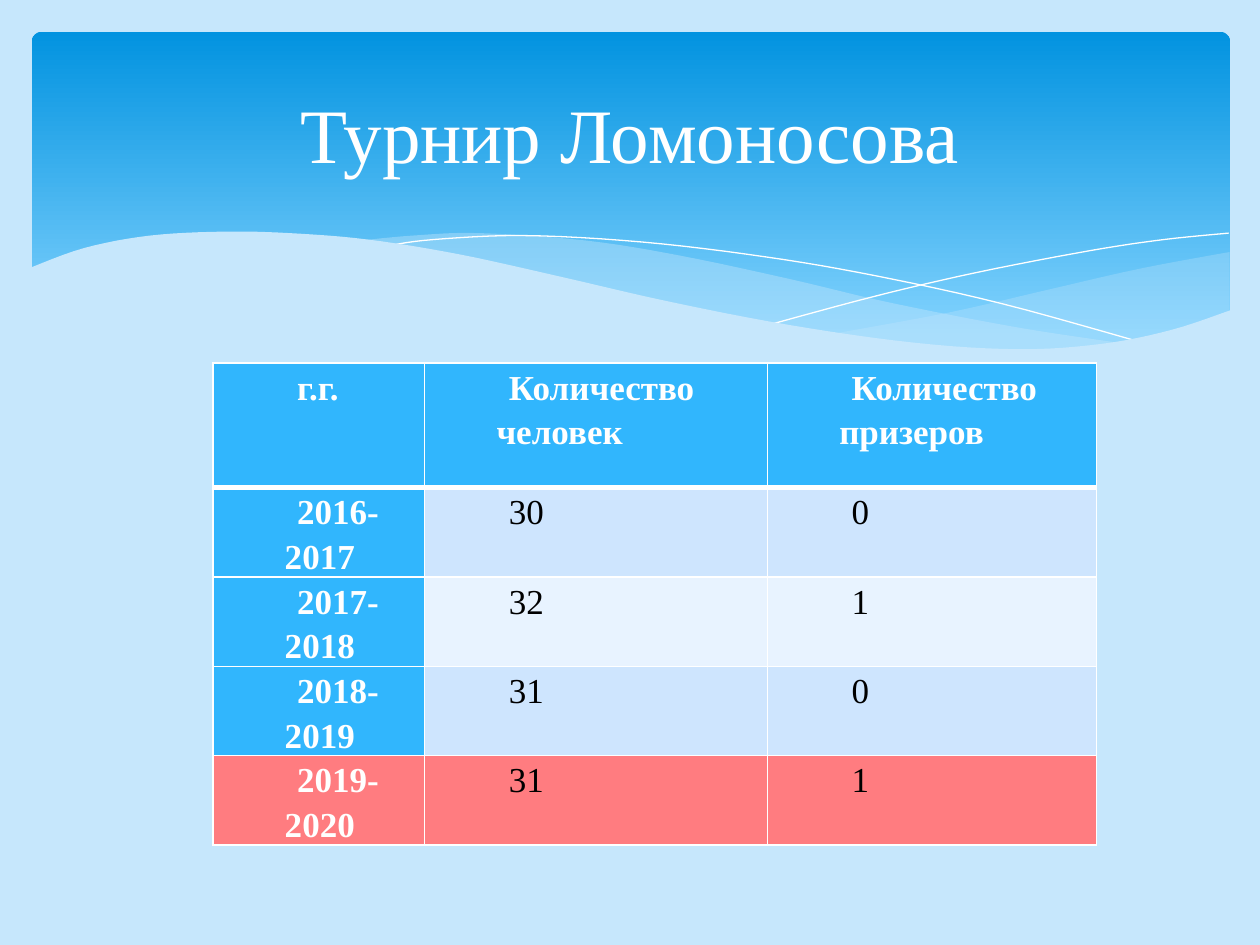
from itertools import pairwise
from lxml import etree
from pptx import Presentation, util as u
from pptx.dml.color import RGBColor
from pptx.enum import shapes, text
from pptx.oxml.ns import qn

hexcolor = RGBColor.from_string
WHITE, SKY, BLUE, RED = "FFFFFF", "C6E7FC", "31B6FD", "FF7C80"
FONT = "Times New Roman"
STEPS = 6


def smooth(knots):
    ends = [knots[0], *knots, knots[-1]]
    curve = [knots[0]]
    for i, (b, c) in enumerate(pairwise(knots)):
        a, d = ends[i], ends[i + 3]
        for t in (n / STEPS for n in range(1, STEPS + 1)):
            curve.append(tuple(
                (2 * q + (r - p) * t + (2 * p - 5 * q + 4 * r - s) * t ** 2
                 + (3 * q - p - 3 * r + s) * t ** 3) / 2
                for p, q, r, s in zip(a, b, c, d)))
    return curve


def assign(target, values):
    for key, value in values.items():
        setattr(target, key, value)


deck = Presentation()
assign(deck, {"slide_width": u.Cm(25.4), "slide_height": u.Cm(19.05)})
slide = deck.slides.add_slide(deck.slide_layouts[5])
slide.background.fill.solid()
slide.background.fill.fore_color.rgb = hexcolor(SKY)

banner = slide.shapes.add_shape(shapes.MSO_SHAPE.ROUNDED_RECTANGLE,
                                u.Cm(0.64), u.Cm(0.64), u.Cm(24.16), u.Cm(6.86))
banner.adjustments[0] = 0.03
banner.shadow.inherit = False
banner.line.fill.background()
banner.fill.gradient()
banner.fill.gradient_angle = 270
for stop, (position, shade) in zip(banner.fill.gradient_stops,
                                   [(0, "0293E0"), (0.9, "83D3FE")]):
    stop.position = position
    stop.color.rgb = hexcolor(shade)

right_swell = (
    smooth([(24.79, 5.08), (23.01, 5.41), (21.13, 5.84), (19.13, 6.3), (16.79, 6.73)])
    + smooth([(16.79, 6.73), (18.59, 6.96), (20.4, 7.06), (21.92, 6.99),
              (23.57, 6.68), (24.79, 6.27)]))
middle_swell = (
    smooth([(22.68, 6.93), (20.5, 6.6), (17.93, 6.1), (15.98, 5.64), (13.74, 5.16),
            (11.81, 4.85), (9.65, 4.7), (8.33, 4.75), (7.26, 4.85)])
    + smooth([(7.26, 4.85), (9.19, 5.16), (11.4, 5.64), (14.38, 6.3), (16.89, 6.76),
              (19, 7.01), (20.78, 7.06), (22.68, 6.93)]))
falling_thread = smooth([(7.85, 4.95), (8.74, 4.83), (10.57, 4.75), (12.95, 4.88),
                         (15.44, 5.18), (17.65, 5.56), (20.19, 6.12), (23.04, 6.91)])
rising_thread = smooth([(15.57, 6.53), (17.65, 5.97), (19.71, 5.49), (22, 5.05),
                        (23.47, 4.83), (24.77, 4.7)])
front_wave = smooth([
    (24.82, 6.25), (23.62, 6.65), (22.23, 6.93), (20.55, 7.04), (18.44, 6.91),
    (15.9, 6.55), (13.44, 6.07), (11.35, 5.59), (9.27, 5.13), (7.42, 4.83),
    (5.84, 4.7), (4.5, 4.67), (3.02, 4.75), (1.7, 5), (0.58, 5.41),
]) + [(0.58, 8.36), (24.82, 8.36)]

for outline, opacity in [(right_swell, 29), (middle_swell, 40), (falling_thread, 0),
                         (rising_thread, 0), (front_wave, 100)]:
    points = [(u.Cm(x), u.Cm(y)) for x, y in outline]
    builder = slide.shapes.build_freeform(*points[0])
    builder.add_line_segments(points[1:], close=opacity > 0)
    wave = builder.convert_to_shape()
    wave.shadow.inherit = False
    if opacity:
        wave.line.fill.background()
        wave.fill.solid()
        wave.fill.fore_color.rgb = hexcolor(SKY)
        tint = wave.fill._xPr.find(qn("a:solidFill"))[0]
        etree.SubElement(tint, qn("a:alpha"), val=str(opacity * 1000))
    else:
        wave.fill.background()
        wave.line.color.rgb = hexcolor(WHITE)
        wave.line.width = u.Pt(0)

records = [
    ("г.г.", "Количество человек", "Количество призеров"),
    ("2016-2017", "30", "0"),
    ("2017-2018", "32", "1"),
    ("2018-2019", "31", "0"),
    ("2019-2020", "31", "1"),
]
row_fills = [BLUE, "CEE5FE", "E8F3FF", "CEE5FE", RED]
widths = [4.27, 6.91, 6.63]
heights = [2.51, 1.47, 1.22, 1.22, 1.22]
results = slide.shapes.add_table(len(records), len(widths), u.Cm(4.29), u.Cm(7.32),
                                 u.Cm(sum(widths)), u.Cm(sum(heights))).table
for column, width in zip(results.columns, widths):
    column.width = u.Cm(width)
for row, height in zip(results.rows, heights):
    row.height = u.Cm(height)

cell_format = {"margin_left": u.Cm(0.18), "margin_right": u.Cm(0.18),
               "margin_top": 0, "margin_bottom": 0}
for r, record in enumerate(records):
    for c, entry in enumerate(record):
        heading = r == 0 or c == 0
        cell = results.cell(r, c)
        assign(cell, cell_format)
        cell.text = entry
        line = cell.text_frame.paragraphs[0]
        assign(line, {"alignment": text.PP_ALIGN.JUSTIFY, "line_spacing": 1.15})
        indents = line._p.get_or_add_pPr()
        indents.set("marL", str(u.Cm(1.27)))
        indents.set("indent", str(u.Cm(0.25)))
        font = line.runs[0].font
        assign(font, {"name": FONT, "size": u.Pt(20), "bold": heading})
        font.color.rgb = hexcolor(WHITE if heading else "000000")
        borders = cell._tc.get_or_add_tcPr()
        for side in ("lnL", "lnR", "lnT", "lnB"):
            thick = (r, side) in [(0, "lnB"), (1, "lnT")]
            edge = etree.SubElement(borders, qn(f"a:{side}"), w=str(u.Pt(3 if thick else 1)))
            paint = etree.SubElement(edge, qn("a:solidFill"))
            etree.SubElement(paint, qn("a:srgbClr"), val=WHITE)
        cell.fill.solid()
        cell.fill.fore_color.rgb = hexcolor(BLUE if c == 0 and r < 4 else row_fills[r])

title = slide.shapes.title
slide.shapes._spTree.append(title._element)
assign(title, {"left": u.Cm(1.27), "top": u.Cm(0.94),
               "width": u.Cm(22.86), "height": u.Cm(3.48)})
title.text_frame.text = "Турнир Ломоносова"
title.text_frame.vertical_anchor = text.MSO_ANCHOR.MIDDLE
heading_line = title.text_frame.paragraphs[0]
heading_line.alignment = text.PP_ALIGN.CENTER
heading_font = heading_line.runs[0].font
assign(heading_font, {"name": FONT, "size": u.Pt(44)})
heading_font.color.rgb = hexcolor(WHITE)

deck.save("out.pptx")
